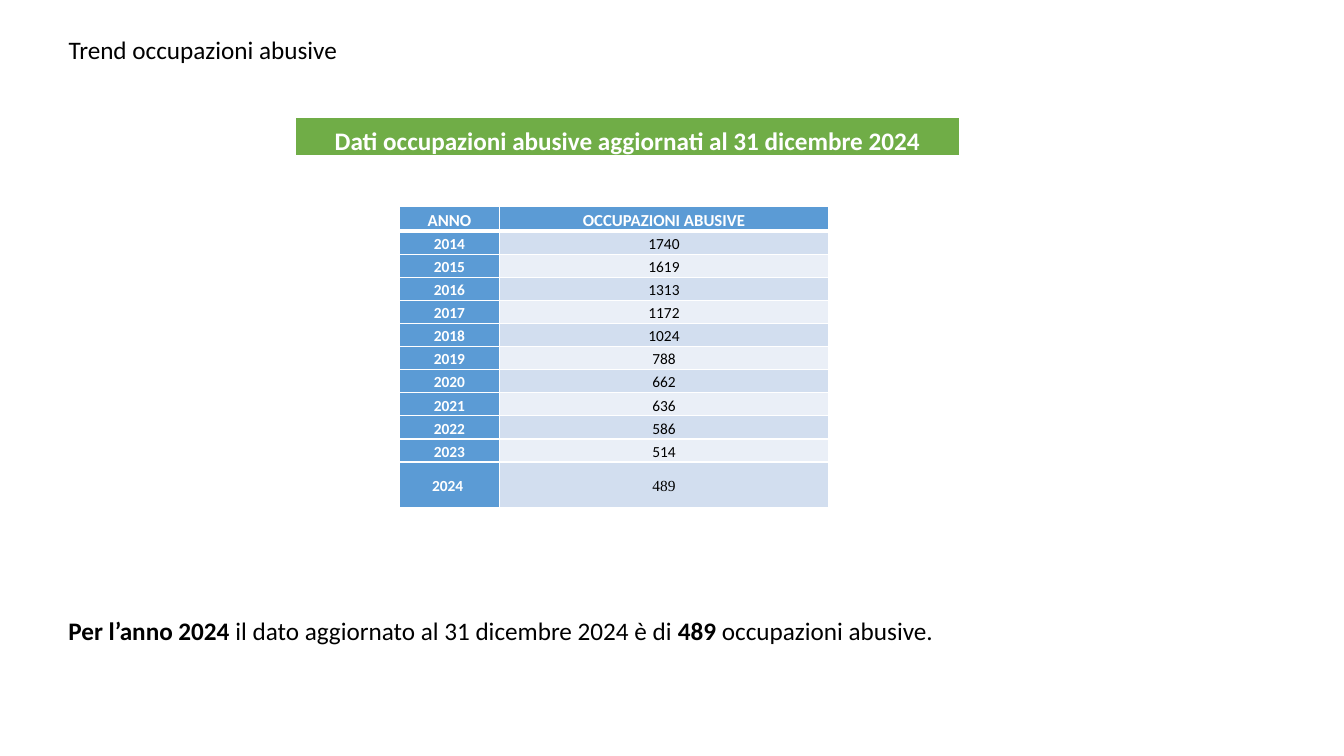
import pptx
import pptx.util
import pptx.dml.color
import pptx.enum.text
import pptx.oxml.ns
import lxml.etree

Pt = pptx.util.Pt
ALIGN = pptx.enum.text.PP_ALIGN
ANCHOR = pptx.enum.text.MSO_ANCHOR

COLORS = {
    "black": "000000",
    "white": "FFFFFF",
    "green": "70AD47",
    "blue": "5B9BD5",
    "band_dark": "D2DEEF",
    "band_light": "EAEFF7",
}
OCCUPATIONS = [
    ("2014", "1740"), ("2015", "1619"), ("2016", "1313"), ("2017", "1172"),
    ("2018", "1024"), ("2019", "788"), ("2020", "662"), ("2021", "636"),
    ("2022", "586"), ("2023", "514"), ("2024 ", "489"),
]


def set_attrs(obj, values):
    for name, value in values.items():
        setattr(obj, name, value)


class SlideBuilder:
    font = "Calibri"
    text_size = 18

    def __init__(self, prs):
        self.slide = prs.slides.add_slide(prs.slide_layouts[5])

    def place(self, sp, left, top, width, height):
        box = {"left": left, "top": top, "width": width, "height": height}
        set_attrs(sp, {name: Pt(value) for name, value in box.items()})

    def run(self, p, text, size=text_size, color="black", bold=False, font=font):
        r = p.add_run()
        r.text = text
        set_attrs(r.font, {"name": font, "size": Pt(size), "bold": bold})
        r.font.color.rgb = pptx.dml.color.RGBColor.from_string(COLORS[color])

    def text(self, sp, box, runs, align):
        self.place(sp, *box)
        tf = sp.text_frame
        set_attrs(tf, {
            "word_wrap": True,
            "vertical_anchor": ANCHOR.TOP,
            "auto_size": pptx.enum.text.MSO_AUTO_SIZE.SHAPE_TO_FIT_TEXT,
        })
        p = tf.paragraphs[0]
        p.alignment = align
        for text, bold in runs:
            self.run(p, text, bold=bold)

    def title(self, box, text):
        self.text(self.slide.shapes.title, box, [(text, False)], ALIGN.LEFT)

    def textbox(self, box, runs):
        sp = self.slide.shapes.add_textbox(*map(Pt, box))
        self.text(sp, box, runs, ALIGN.JUSTIFY)

    def table(self, left, top, widths, heights):
        frame = self.slide.shapes.add_table(
            len(heights), len(widths), Pt(left), Pt(top),
            Pt(sum(widths)), Pt(sum(heights)))
        tbl = frame.table
        set_attrs(tbl, {"first_row": False, "horz_banding": False})
        for col, width in zip(tbl.columns, widths):
            col.width = Pt(width)
        for row, height in zip(tbl.rows, heights):
            row.height = Pt(height)
        return tbl

    def cell(self, cell, text, fill, anchor=ANCHOR.MIDDLE, bottom=1, **style):
        set_attrs(cell, {
            "margin_left": Pt(3.5), "margin_right": Pt(3.5),
            "margin_top": 0, "margin_bottom": 0, "vertical_anchor": anchor,
        })
        self.borders(cell, bottom)
        cell.fill.solid()
        cell.fill.fore_color.rgb = pptx.dml.color.RGBColor.from_string(COLORS[fill])
        p = cell.text_frame.paragraphs[0]
        set_attrs(p, {"alignment": ALIGN.CENTER, "line_spacing": 1.15})
        self.run(p, text, **style)

    def borders(self, cell, bottom):
        qn = pptx.oxml.ns.qn
        tcPr = cell._tc.get_or_add_tcPr()
        for side, width in (("L", 1), ("R", 1), ("T", 1), ("B", bottom)):
            ln = lxml.etree.SubElement(tcPr, qn("a:ln" + side), w=str(Pt(width)))
            fill = lxml.etree.SubElement(ln, qn("a:solidFill"))
            lxml.etree.SubElement(fill, qn("a:srgbClr"), val=COLORS["white"])


def main():
    prs = pptx.Presentation()
    set_attrs(prs, {"slide_width": Pt(960), "slide_height": Pt(540)})
    s = SlideBuilder(prs)

    # Title
    s.title((41.8, 20.9, 813.6, 29), "Trend occupazioni abusive")

    # Green banner
    banner = s.table(211, 83.8, [474.5], [28.5])
    s.cell(banner.cell(0, 0), "Dati occupazioni abusive aggiornati al 31 dicembre 2024",
           "green", anchor=ANCHOR.BOTTOM, bottom=3, color="white", bold=True)

    # Closing sentence
    s.textbox((41.8, 435.6, 813.6, 29), [
        ("Per l’anno 2024 ", True),
        ("il dato aggiornato al 31 dicembre 2024 è di ", False),
        ("489 ", True),
        ("occupazioni abusive.", False),
    ])

    # Yearly table
    last = len(OCCUPATIONS)
    years = s.table(285.3, 147.6, [71.5, 235], [17.5] + [16.5] * (last - 1) + [32.5])
    for col, heading in enumerate(("ANNO", "OCCUPAZIONI ABUSIVE")):
        s.cell(years.cell(0, col), heading, "blue", bottom=3,
               size=12, color="white", bold=True)
    for row, (year, count) in enumerate(OCCUPATIONS, 1):
        s.cell(years.cell(row, 0), year, "blue", size=11, color="white", bold=True)
        s.cell(years.cell(row, 1), count, "band_dark" if row % 2 else "band_light",
               size=11, font="Times New Roman" if row == last else s.font)

    prs.save("out.pptx")


if __name__ == "__main__":
    main()
